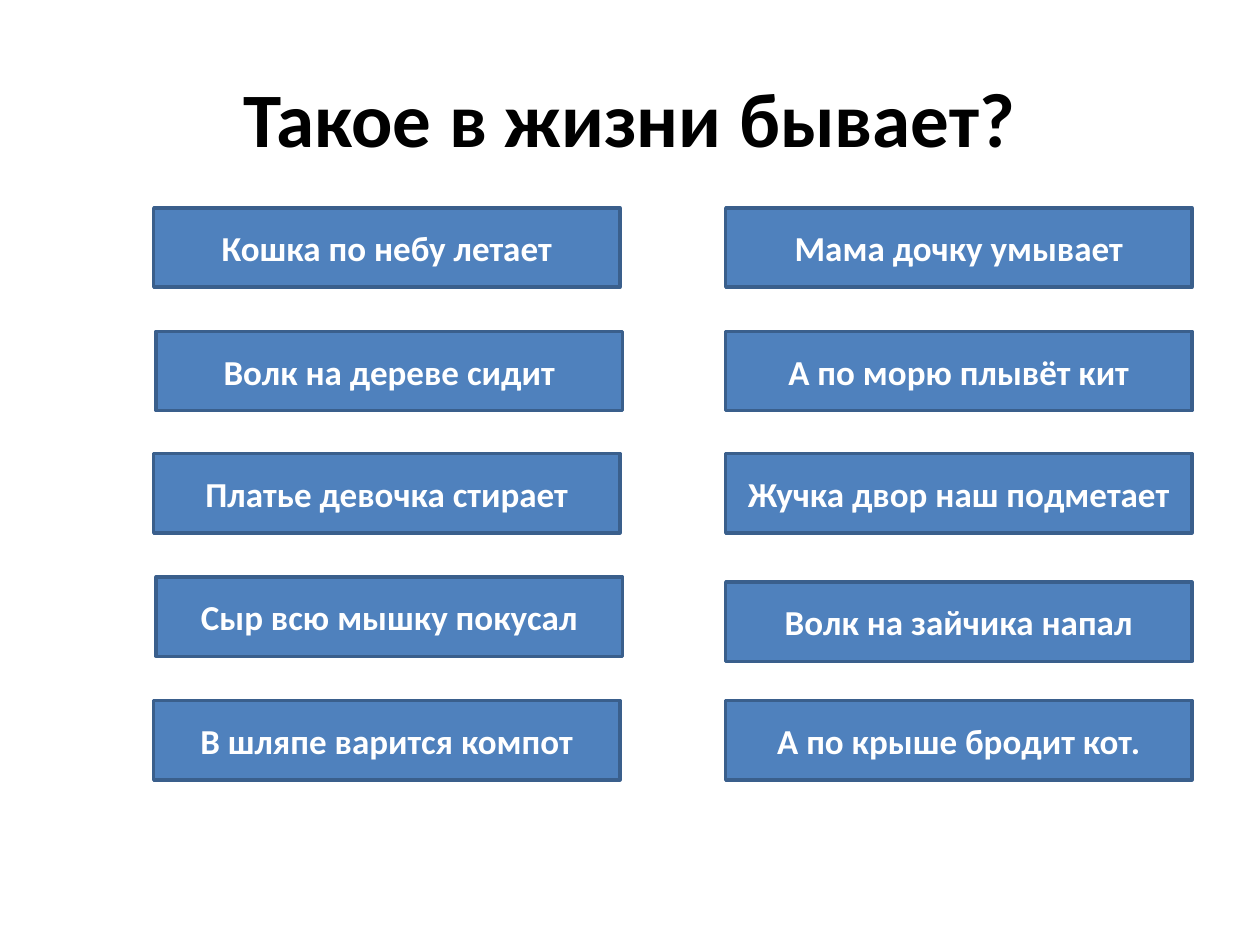
import pptx
import pptx.util
import pptx.dml.color
import pptx.enum.shapes
import pptx.enum.text

Inches = pptx.util.Inches
Pt = pptx.util.Pt
RGBColor = pptx.dml.color.RGBColor

BLACK = RGBColor(0x00, 0x00, 0x00)
WHITE = RGBColor(0xFF, 0xFF, 0xFF)
BLUE = RGBColor(0x4F, 0x81, 0xBD)
EDGE = RGBColor(0x3A, 0x5F, 0x8C)

LEFT = [
    (1.22, 1.65, "Кошка по небу летает"),
    (1.24, 2.63, "Волк на дереве сидит"),
    (1.22, 3.6, "Платье девочка стирает"),
    (1.24, 4.58, "Сыр всю мышку покусал"),
    (1.22, 5.56, "В шляпе варится компот"),
]
RIGHT = [
    (5.76, 5.56, "А по крыше бродит кот."),
    (5.76, 4.62, "Волк на зайчика напал"),
    (5.76, 3.6, "Жучка двор наш подметает"),
    (5.76, 2.63, "А по морю плывёт кит"),
    (5.76, 1.65, "Мама дочку умывает"),
]


def put_text(shape, text, size, color):
    frame = shape.text_frame
    frame.word_wrap = True
    frame.vertical_anchor = pptx.enum.text.MSO_ANCHOR.MIDDLE
    line = frame.paragraphs[0]
    line.text = text
    line.alignment = pptx.enum.text.PP_ALIGN.CENTER
    line.font.name = "Calibri"
    line.font.size = Pt(size)
    line.font.bold = True
    line.font.color.rgb = color


def add_title(slide, text):
    title = slide.shapes.title
    title.left, title.top = Inches(0.5), Inches(0.3)
    title.width, title.height = Inches(9), Inches(1.25)
    put_text(title, text, 44, BLACK)


def add_card(slide, left, top, text):
    card = slide.shapes.add_shape(
        pptx.enum.shapes.MSO_SHAPE.RECTANGLE,
        Inches(left), Inches(top), Inches(3.7), Inches(0.63))
    card.shadow.inherit = False
    card.fill.solid()
    card.fill.fore_color.rgb = BLUE
    card.line.color.rgb = EDGE
    card.line.width = Pt(2)
    put_text(card, text, 20, WHITE)


def main():
    deck = pptx.Presentation()
    deck.slide_width, deck.slide_height = Inches(10), Inches(7.5)
    slide = deck.slides.add_slide(deck.slide_layouts[5])
    add_title(slide, "Такое в жизни бывает?")
    for left, top, text in LEFT + RIGHT:
        add_card(slide, left, top, text)
    deck.save("out.pptx")


if __name__ == "__main__":
    main()
